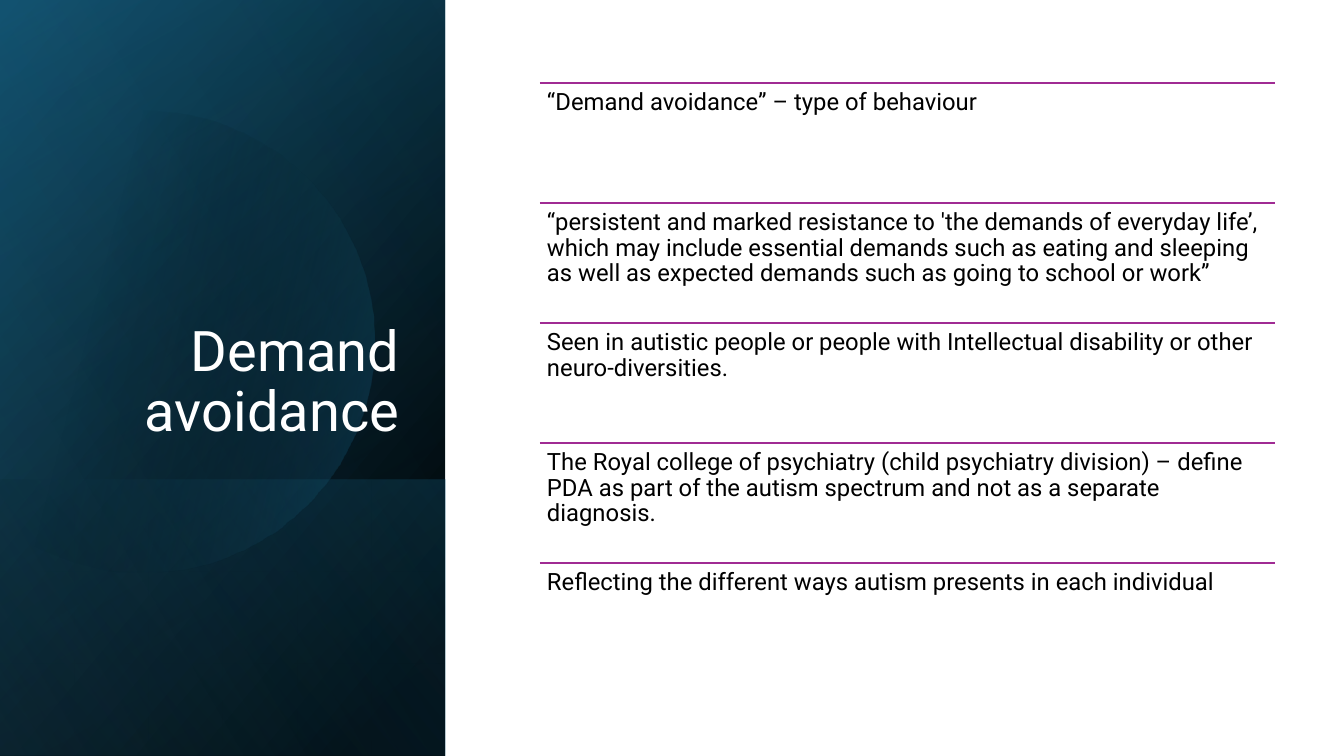
"""Build the "Demand avoidance" slide."""
from math import acos, cos, sin

from lxml import etree
from pptx import Presentation
from pptx.dml.color import RGBColor
from pptx.enum.shapes import MSO_CONNECTOR, MSO_SHAPE
from pptx.enum.text import MSO_ANCHOR, PP_ALIGN
from pptx.oxml.ns import qn
from pptx.util import Pt

EMU_PER_PX = 914400 / 100.8
RECTANGLE = MSO_SHAPE.RECTANGLE
STRAIGHT = MSO_CONNECTOR.STRAIGHT
TOP, BOTTOM = MSO_ANCHOR.TOP, MSO_ANCHOR.BOTTOM
LEFT, RIGHT = PP_ALIGN.LEFT, PP_ALIGN.RIGHT

SLIDE_WIDTH, SLIDE_HEIGHT = 1344, 756
PANEL_WIDTH = 445
POINTS_LEFT, POINTS_TOP, POINTS_WIDTH, POINT_PITCH = 540, 83, 735, 120

PANEL_LAYERS = [
    (0, 50, [(8, "000000", 100), (100, "104862", 100)]),
    (0, 30, [(0, "000000", 0), (99, "156082", 46)]),
    (480, 130, [(2, "156082", 29), (100, "000000", 30)]),
]
DISC_STOPS = [(29, "000000", 0), (100, "156082", 43)]
SHEEN_STOPS = [(0, "000000", 0), (99, "46B1E1", 11)]

POINTS = [
    "“Demand avoidance” – type of behaviour",
    "“persistent and marked resistance to 'the demands of everyday life’, "
    "which may include essential demands such as eating and sleeping "
    "as well as expected demands such as going to school or work”",
    "Seen in autistic people or people with Intellectual disability "
    "or other neuro-diversities.",
    "The Royal college of psychiatry (child psychiatry division) – define PDA "
    "as part of the autism spectrum and not as a separate diagnosis.",
    "Reflecting the different ways autism presents in each individual",
]


def px(length):
    """Turn px into EMU."""
    return round(length * EMU_PER_PX)


def color(value):
    """Turn a hex string into a colour."""
    return RGBColor.from_string(value)


class SlideCanvas:
    """Holds the style and the slide being drawn."""

    font = "Roboto"
    rule_color = "A02B93"

    def __init__(self, slide):
        """Keep the slide to draw on."""
        self.slide = slide

    def paint(self, shape, angle, stops):
        """Fill a shape with a two-stop gradient turned clockwise by angle."""
        shape.shadow.inherit = False
        shape.line.fill.background()
        shape.fill.gradient()
        shape.fill.gradient_angle = 360 - angle
        for stop, (position, shade, _) in zip(shape.fill.gradient_stops, stops):
            stop.position = position / 100
            stop.color.rgb = color(shade)
        shades = shape._element.spPr.iter(qn("a:srgbClr"))
        for shade, (_, _, opacity) in zip(list(shades), stops):
            etree.SubElement(shade, qn("a:alpha")).set("val", str(opacity * 1000))

    def panel(self, top, angle, stops):
        """Draw a quarter-turned, mirrored layer from top to the slide's foot."""
        height = SLIDE_HEIGHT - top
        offset = (PANEL_WIDTH - height) / 2
        layer = self.slide.shapes.add_shape(
            RECTANGLE, px(offset), px(top - offset), px(height), px(PANEL_WIDTH))
        layer.rotation = 90
        layer._element.spPr.xfrm.set("flipH", "1")
        self.paint(layer, angle, stops)

    def disc(self, center_x, center_y, radius, angle, stops, steps=120):
        """Draw a disc cut off at the slide's left edge."""
        limit = acos(-center_x / radius)
        turns = [limit * (2 * step / steps - 1) for step in range(steps + 1)]
        rim = [(center_x + radius * cos(turn), center_y + radius * sin(turn))
               for turn in turns]
        outline = self.slide.shapes.build_freeform(*rim[0], scale=EMU_PER_PX)
        outline.add_line_segments(rim[1:], close=True)
        self.paint(outline.convert_to_shape(), angle, stops)

    def rule(self, left, top, width):
        """Draw a thin horizontal line."""
        rule = self.slide.shapes.add_connector(
            STRAIGHT, px(left), px(top), px(left + width), px(top))
        rule.line.color.rgb = color(self.rule_color)
        rule.line.width = Pt(1)
        etree.SubElement(rule._element.spPr, qn("a:effectLst"))

    def text(self, content, left, top, width, height, *, size, shade="000000",
             align=LEFT, anchor=TOP, inset_x=7, inset_y=7, space_after=0):
        """Write one paragraph in a wrapping box."""
        box = self.slide.shapes.add_textbox(
            px(left), px(top), px(width), px(height))
        frame = box.text_frame
        frame.word_wrap = True
        frame.vertical_anchor = anchor
        frame.margin_left = frame.margin_right = px(inset_x)
        frame.margin_top = frame.margin_bottom = px(inset_y)
        paragraph = frame.paragraphs[0]
        paragraph.alignment = align
        paragraph.line_spacing = 0.9
        paragraph.space_after = Pt(space_after)
        run = paragraph.add_run()
        run.text = content
        run.font.name = self.font
        run.font.size = Pt(size)
        run.font.color.rgb = color(shade)


def main():
    """Draw the side panel, the title and the ruled points."""
    deck = Presentation()
    deck.slide_width, deck.slide_height = px(SLIDE_WIDTH), px(SLIDE_HEIGHT)
    canvas = SlideCanvas(deck.slides.add_slide(deck.slide_layouts[6]))

    for top, angle, stops in PANEL_LAYERS:
        canvas.panel(top, angle, stops)
    canvas.disc(143, 342, 231, 14, DISC_STOPS)
    canvas.panel(0, 120, SHEEN_STOPS)

    canvas.text("Demand avoidance", 65, 185, 344, 264, size=40, shade="FFFFFF",
                align=RIGHT, anchor=BOTTOM, inset_x=10, inset_y=5)
    for index, point in enumerate(POINTS):
        top = POINTS_TOP + index * POINT_PITCH
        canvas.rule(POINTS_LEFT, top, POINTS_WIDTH)
        canvas.text(point, POINTS_LEFT, top, POINTS_WIDTH, POINT_PITCH,
                    size=17, space_after=6)

    deck.save("out.pptx")


if __name__ == "__main__":
    main()
